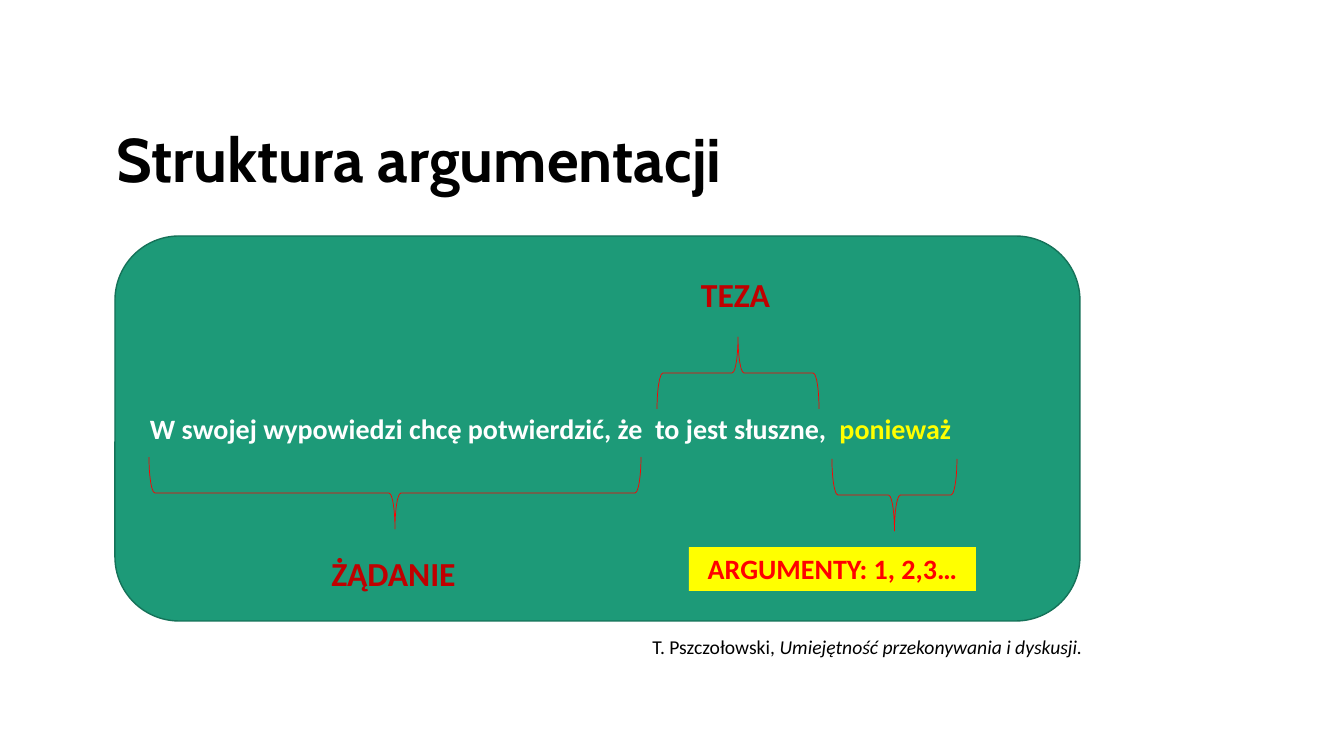
"""Build the slide on the structure of argumentation."""
from pptx import Presentation, util as u
from pptx.dml.color import RGBColor
from pptx.enum import shapes, text

COLORS = {"black": "000000", "white": "FFFFFF", "green": "1D9A78", "edge": "157259",
          "red": "FF0000", "crimson": "C00000", "yellow": "FFFF00"}
SIZE = (1344, 756)
TITLE = ("Struktura argumentacji", (106, 100, 974, 126))
PANEL = (115, 236, 965, 385)
SENTENCE = [(" W swojej wypowiedzi chcę potwierdzić, że  to jest słuszne,  ", "white"),
            ("ponieważ", "yellow")]
BRACES = [((657, 337, 162, 72), 90), ((832, 459, 125, 72), 270), ((149, 457, 492, 72), 270)]
LABELS = [("TEZA", (672, 269, 127, 50), 24, "crimson", None),
          ("ŻĄDANIE", (251, 548, 285, 50), 24, "crimson", None),
          ("ARGUMENTY: 1, 2,3…", (689, 547, 287, 44), 20, "red", "yellow")]
SOURCE = [("T. Pszczołowski, ", False), ("Umiejętność przekonywania i dyskusji. ", True)]
SOURCE_BOX = (513, 630, 584, 34)


def px(*lengths):
    return [u.Emu(round(n * 914400 / 100.8)) for n in lengths]


def rgb(name):
    return RGBColor.from_string(COLORS[name])


def add_run(p, words, size, color, bold=True, italic=False, font="Calibri"):
    r = p.add_run()
    r.text = words
    r.font.name, r.font.size = font, u.Pt(size)
    r.font.bold, r.font.italic = bold, italic
    r.font.color.rgb = rgb(color)


def add_shape(s, kind, box, line, width):
    sp = s.shapes.add_shape(kind, *px(*box))
    sp.shadow.inherit = False
    sp.line.color.rgb = rgb(line)
    sp.line.width = u.Pt(width)
    return sp


def add_text(s, box, align):
    sp = s.shapes.add_textbox(*px(*box))
    sp.text_frame.word_wrap = True
    p = sp.text_frame.paragraphs[0]
    p.alignment = align
    return sp, p


def main():
    prs = Presentation()
    prs.slide_width, prs.slide_height = px(*SIZE)
    s = prs.slides.add_slide(prs.slide_layouts[5])

    title, box = TITLE
    sp = s.shapes.title
    sp.left, sp.top, sp.width, sp.height = px(*box)
    sp.text_frame.vertical_anchor = text.MSO_ANCHOR.MIDDLE
    p = sp.text_frame.paragraphs[0]
    p.alignment, p.line_spacing = text.PP_ALIGN.LEFT, 0.9
    add_run(p, title, 44, "black", font="Cabin")

    panel = add_shape(s, shapes.MSO_SHAPE.ROUNDED_RECTANGLE, PANEL, "edge", 1)
    panel.fill.solid()
    panel.fill.fore_color.rgb = rgb("green")
    panel.text_frame.vertical_anchor = text.MSO_ANCHOR.MIDDLE
    p = panel.text_frame.paragraphs[0]
    p.alignment = text.PP_ALIGN.LEFT
    for words, color in SENTENCE:
        add_run(p, words, 20, color)

    for (x, y, w, h), angle in BRACES:
        upright = (x + (w - h) / 2, y + (h - w) / 2, h, w)
        brace = add_shape(s, shapes.MSO_SHAPE.LEFT_BRACE, upright, "red", 0.5)
        brace.fill.background()
        brace.rotation = angle

    for words, box, size, color, fill in LABELS:
        sp, p = add_text(s, box, text.PP_ALIGN.CENTER)
        if fill:
            sp.fill.solid()
            sp.fill.fore_color.rgb = rgb(fill)
        add_run(p, words, size, color)

    sp, p = add_text(s, SOURCE_BOX, text.PP_ALIGN.RIGHT)
    for words, italic in SOURCE:
        add_run(p, words, 14, "black", bold=False, italic=italic)

    prs.save("out.pptx")


if __name__ == "__main__":
    main()
